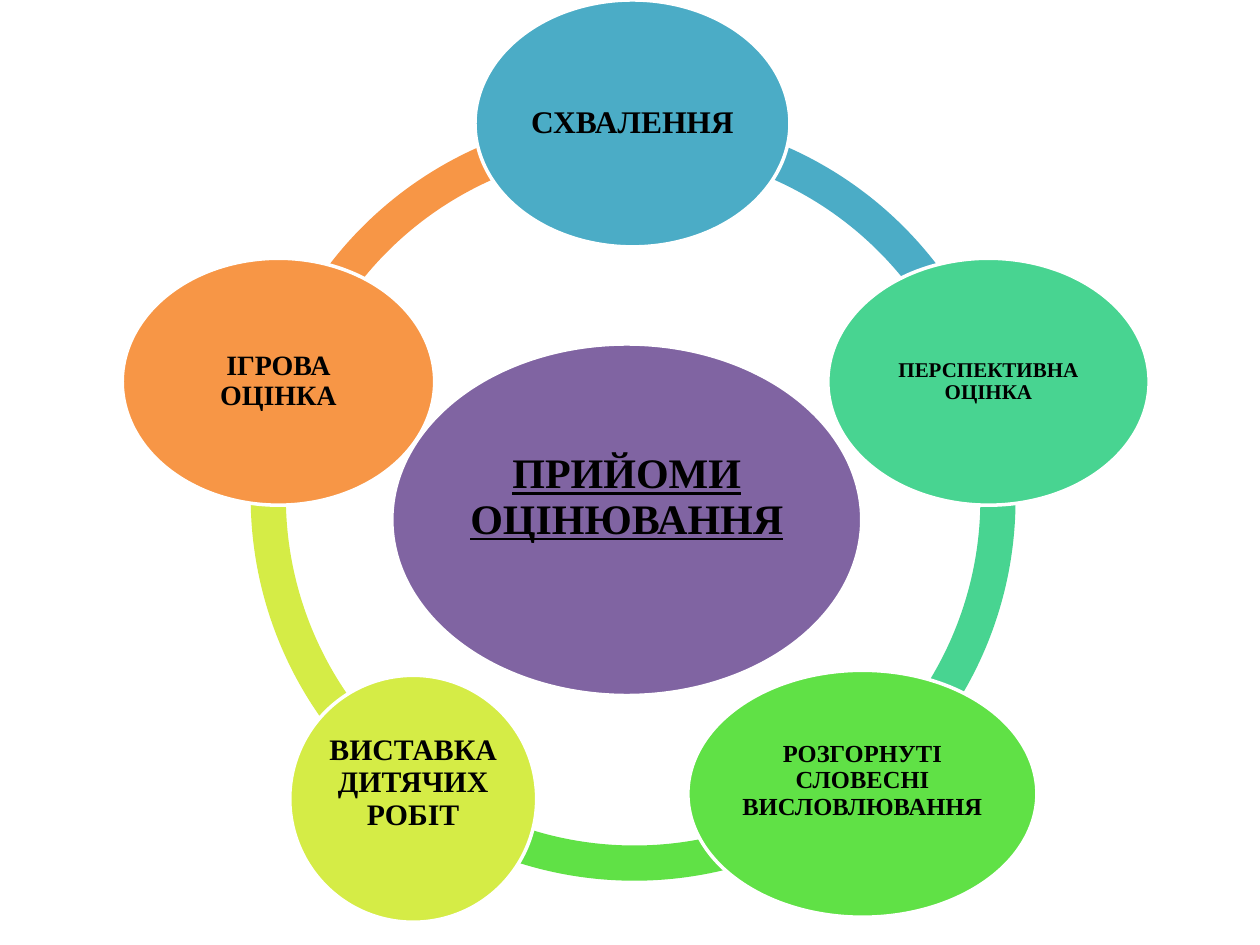
from pptx import Presentation
from pptx.dml.color import RGBColor
from pptx.enum.shapes import MSO_SHAPE as Shape
from pptx.enum.text import MSO_ANCHOR as Anchor, PP_ALIGN as Align
from pptx.util import Inches, Pt

COLORS = {
    "blue": "4BACC6",
    "teal": "48D491",
    "green": "60E146",
    "lime": "D5EC46",
    "orange": "F79646",
    "purple": "8064A2",
    "outline": "FFFFFF",
    "text": "000000",
}


class CycleSlide:
    font = "Times New Roman"
    line_spacing = 0.9
    ring_size = 6.07
    ring_thickness = 0.046

    def __init__(self, slide):
        self.slide = slide

    def add_filled(self, kind, left, top, width, height, color):
        shape = self.slide.shapes.add_shape(
            kind, Inches(left), Inches(top), Inches(width), Inches(height))
        shape.shadow.inherit = False
        shape.fill.solid()
        shape.fill.fore_color.rgb = RGBColor.from_string(COLORS[color])
        return shape

    def add_arc(self, left, top, start, end, color):
        """Add a ring segment running clockwise between two angles in degrees."""
        arc = self.add_filled(Shape.BLOCK_ARC, left, top,
                              self.ring_size, self.ring_size, color)
        arc.line.fill.background()
        # Angles are stored in 60000ths of a degree, adjustments in 100000ths
        arc.adjustments[0] = start * 0.6
        arc.adjustments[1] = end * 0.6
        arc.adjustments[2] = self.ring_thickness

    def add_oval(self, left, top, width, height, color, text, size,
                 raised=False, underline=False):
        oval = self.add_filled(Shape.OVAL, left, top, width, height, color)
        oval.line.color.rgb = RGBColor.from_string(COLORS["outline"])
        oval.line.width = Pt(2)

        frame = oval.text_frame
        frame.word_wrap = True
        frame.vertical_anchor = Anchor.MIDDLE
        inset = Inches(0.02)
        frame.margin_left = frame.margin_right = frame.margin_top = inset
        # Raised labels leave one line of room below them
        frame.margin_bottom = inset + (Pt(size * 1.04) if raised else 0)

        paragraph = frame.paragraphs[0]
        paragraph.alignment = Align.CENTER
        paragraph.line_spacing = self.line_spacing
        run = paragraph.add_run()
        run.text = text
        run.font.name = self.font
        run.font.size = Pt(size)
        run.font.bold = True
        run.font.underline = underline
        run.font.color.rgb = RGBColor.from_string(COLORS["text"])


def main():
    prs = Presentation()
    prs.slide_width, prs.slide_height = Inches(10), Inches(7.5)
    cycle = CycleSlide(prs.slides.add_slide(prs.slide_layouts[6]))

    # Ring segments
    for segment in (
        (1.99, 0.91, 198, 270, "orange"),
        (1.99, 0.91, 126, 198, "lime"),
        (2, 0.92, 52.43, 126.35, "green"),
        (1.99, 0.93, 341.65, 52.21, "teal"),
        (1.99, 0.91, 270, 342, "blue"),
    ):
        cycle.add_arc(*segment)

    # Central topic
    cycle.add_oval(3.11, 2.73, 3.73, 2.79, "purple", "ПРИЙОМИ ОЦІНЮВАННЯ", 24,
                   raised=True, underline=True)

    # Assessment methods, clockwise from the top
    oval_height = 1.96
    for left, top, width, color, text, size, raised in (
        (3.77, 0, 2.5, "blue", "СХВАЛЕННЯ", 18, False),
        (6.57, 2.05, 2.55, "teal", "ПЕРСПЕКТИВНА ОЦІНКА", 12, False),
        (5.46, 5.32, 2.77, "green", "РОЗГОРНУТІ СЛОВЕСНІ ВИСЛОВЛЮВАННЯ", 14, True),
        (2.3, 5.36, 1.96, "lime", "ВИСТАВКА ДИТЯЧИХ РОБІТ", 17, True),
        (0.97, 2.05, 2.48, "orange", "ІГРОВА ОЦІНКА", 16, False),
    ):
        cycle.add_oval(left, top, width, oval_height, color, text, size, raised)

    prs.save("out.pptx")


if __name__ == "__main__":
    main()
